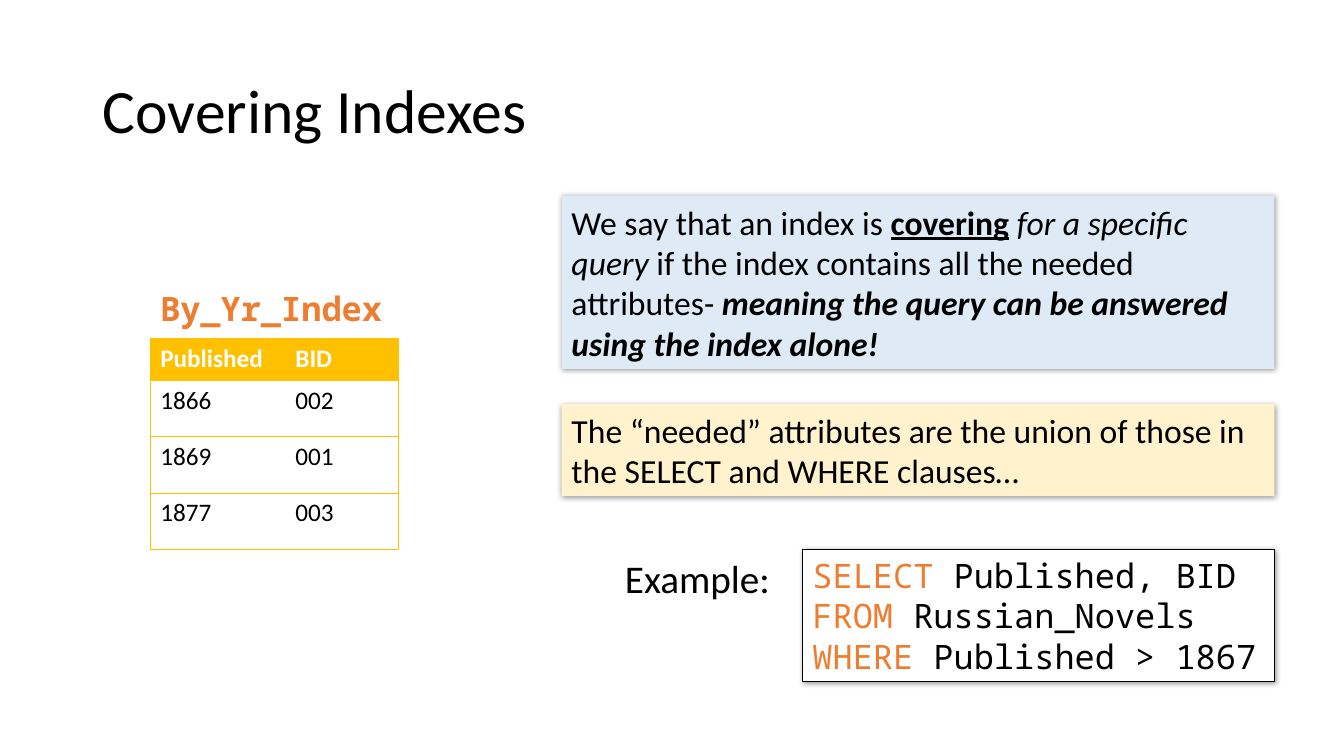
import pptx
import pptx.util
import pptx.dml.color
import pptx.enum.shapes
import pptx.enum.text
import pptx.oxml
import pptx.oxml.ns
from dataclasses import dataclass
from pptx.util import Inches


@dataclass(frozen=True)
class Theme:
    """Colours, fonts and type sizes of the slide."""
    text: str = "000000"
    paper: str = "FFFFFF"
    keyword: str = "ED7D31"
    gold: str = "FFC000"
    definition: str = "DEEBF7"
    remark: str = "FFF2CC"
    sans: str = "Calibri"
    mono: str = "Noto Sans Mono"
    title: int = 44
    label: int = 28
    body: int = 24
    cell: int = 18


def rgb(colour):
    """Turn a hex string into a colour."""
    return pptx.dml.color.RGBColor.from_string(colour)


def element(xml):
    """Build one drawing element."""
    return pptx.oxml.parse_xml(xml.replace(" ", f" {pptx.oxml.ns.nsdecls('a')} ", 1))


class Deck:
    """Holds the theme and the current slide."""

    def __init__(self, theme):
        """Open a widescreen presentation with one blank slide."""
        self.theme = theme
        self.presentation = pptx.Presentation()
        self.presentation.slide_width = Inches(13.33)
        self.presentation.slide_height = Inches(7.5)
        self.slide = self.presentation.slides.add_slide(self.presentation.slide_layouts[6])

    def set_text(self, frame, lines, size, face=None, colour=None, bold=None):
        """Fill a frame with lines, each a list of (text, style) runs."""
        for number, line in enumerate(lines):
            paragraph = frame.add_paragraph() if number else frame.paragraphs[0]
            paragraph.alignment = pptx.enum.text.PP_ALIGN.LEFT
            paragraph.font.size = pptx.util.Pt(size)
            paragraph.font.name = face or self.theme.sans
            paragraph.font.color.rgb = rgb(colour or self.theme.text)
            paragraph.font.bold = bold
            for words, style in line:
                run = paragraph.add_run()
                run.text = words
                run.font.bold = "b" in style or None
                run.font.italic = "i" in style or None
                run.font.underline = "u" in style or None
                if "k" in style:
                    run.font.color.rgb = rgb(self.theme.keyword)

    def label(self, place, words, size, wrap=False, middle=False, **font):
        """Add a plain text box."""
        frame = self.slide.shapes.add_textbox(*map(Inches, place)).text_frame
        frame.word_wrap = wrap
        self.set_text(frame, [[(words, "")]], size, **font)
        if middle:
            frame.vertical_anchor = pptx.enum.text.MSO_ANCHOR.MIDDLE
            frame.paragraphs[0].line_spacing = 0.9

    def card(self, place, lines, fill, outline=None, wrap=True, **font):
        """Add a filled rectangle with a soft shadow and text."""
        card = self.slide.shapes.add_shape(
            pptx.enum.shapes.MSO_SHAPE.RECTANGLE, *map(Inches, place))
        card.fill.solid()
        card.fill.fore_color.rgb = rgb(fill)
        if outline:
            card.line.color.rgb = rgb(outline)
            card.line.width = pptx.util.Pt(0.75)
        else:
            card.line.fill.background()
        card.shadow.inherit = False
        effects = card.element.spPr.find(pptx.oxml.ns.qn("a:effectLst"))
        effects.append(element(
            '<a:outerShdw blurRad="50800" dist="12700" dir="2700000" algn="tl" rotWithShape="0">'
            '<a:srgbClr val="000000"><a:alpha val="40000"/></a:srgbClr></a:outerShdw>'))
        card.text_frame.word_wrap = wrap
        self.set_text(card.text_frame, lines, self.theme.body, **font)

    def table(self, place, records, widths, heights):
        """Add a table with a gold header, outline and row rules."""
        table = self.slide.shapes.add_table(
            len(records), len(widths), *map(Inches, place)).table
        table.horz_banding = False
        for column, width in zip(table.columns, widths):
            column.width = Inches(width)
        for top, (row, height, record) in enumerate(zip(table.rows, heights, records)):
            row.height = Inches(height)
            for left, (cell, words) in enumerate(zip(row.cells, record)):
                header = top == 0
                cell.fill.solid()
                cell.fill.fore_color.rgb = rgb(self.theme.gold if header else self.theme.paper)
                self.set_text(cell.text_frame, [[(words, "")]], self.theme.cell, bold=header,
                              colour=self.theme.paper if header else None)
                self.border(cell, {"L": left == 0, "R": left == len(widths) - 1,
                                   "T": True, "B": True})

    def border(self, cell, sides):
        """Draw or clear each side of a cell."""
        properties = cell._tc.get_or_add_tcPr()
        gold = f'<a:solidFill><a:srgbClr val="{self.theme.gold}"/></a:solidFill>'
        for order, (side, drawn) in enumerate(sides.items()):
            paint = gold if drawn else "<a:noFill/>"
            properties.insert(order, element(f'<a:ln{side} w="6350">{paint}</a:ln{side}>'))


def main():
    """Build and save the slide."""
    theme = Theme()
    deck = Deck(theme)
    deck.label((0.92, 0.4, 11.5, 1.45), "Covering Indexes", theme.title, wrap=True, middle=True)
    index_entries = [("Published", "BID"), ("1866", "002"), ("1869", "001"), ("1877", "003")]
    deck.table((1.49, 3.36, 2.46, 2.09), index_entries, (1.34, 1.12), (0.41, 0.56, 0.56, 0.56))
    deck.label((1.49, 2.81, 2.44, 0.5), "By_Yr_Index", theme.body,
               face=theme.mono, colour=theme.keyword, bold=True)
    definition = [("We say that an index is ", ""), ("covering", "bu"), (" ", ""),
                  ("for a specific query", "i"),
                  (" if the index contains all the needed attributes- ", ""),
                  ("meaning the query can be answered using the index alone!", "bi")]
    deck.card((5.57, 1.94, 7.07, 1.72), [definition], theme.definition)
    remark = "The “needed” attributes are the union of those in the SELECT and WHERE clauses…"
    deck.card((5.57, 4.01, 7.07, 0.91), [[(remark, "")]], theme.remark)
    clauses = [("SELECT ", "Published, BID"), ("FROM ", "Russian_Novels"),
               ("WHERE ", "Published > 1867")]
    query = [[(keyword, "k"), (operand, "")] for keyword, operand in clauses]
    deck.card((7.96, 5.45, 4.68, 1.31), query, theme.paper,
              outline=theme.text, wrap=False, face=theme.mono)
    deck.label((6.1, 5.45, 1.65, 0.57), "Example:", theme.label)
    deck.presentation.save("out.pptx")


if __name__ == "__main__":
    main()
